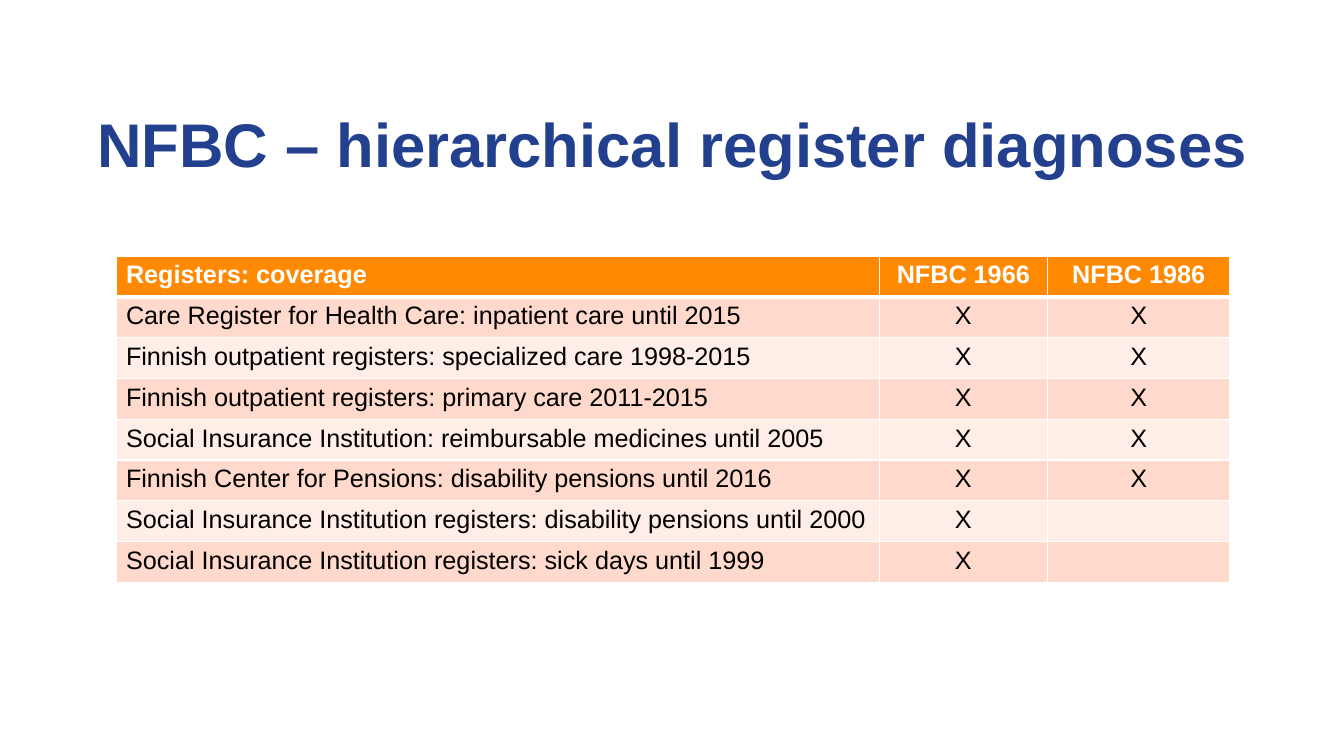
from lxml import etree
from pptx import Presentation
from pptx.dml.color import RGBColor
from pptx.enum import shapes, text
from pptx.oxml import ns
from pptx.util import Inches, Pt

TITLE = "NFBC – hierarchical register diagnoses"
HEADER = ("Registers: coverage", "NFBC 1966", "NFBC 1986")
REGISTERS = [
    ("Care Register for Health Care: inpatient care until 2015", "X", "X"),
    ("Finnish outpatient registers: specialized care 1998-2015", "X", "X"),
    ("Finnish outpatient registers: primary care 2011-2015", "X", "X"),
    ("Social Insurance Institution: reimbursable medicines until 2005", "X", "X"),
    ("Finnish Center for Pensions: disability pensions until 2016", "X", "X"),
    ("Social Insurance Institution registers: disability pensions until 2000", "X", ""),
    ("Social Insurance Institution registers: sick days until 1999", "X", ""),
]
COLUMN_WIDTHS = (7.57, 1.67, 1.81)

FONT = "Arial"
WHITE = RGBColor(0xFF, 0xFF, 0xFF)
BLACK = RGBColor(0x00, 0x00, 0x00)
BLUE = RGBColor(0x23, 0x40, 0x8F)
ORANGE = RGBColor(0xFF, 0x89, 0x00)
BANDS = (RGBColor(0xFF, 0xED, 0xE7), RGBColor(0xFF, 0xDA, 0xCC))


def style_text(paragraph, size, color, bold, align):
    paragraph.alignment = align
    for run in paragraph.runs:
        run.font.name = FONT
        run.font.size = Pt(size)
        run.font.bold = bold
        run.font.color.rgb = color


def set_borders(cell, widths):
    """Draw white cell borders; widths in points map side letters L, R, T, B."""
    properties = cell._tc.get_or_add_tcPr()
    for position, (side, width) in enumerate(widths.items()):
        line = etree.Element(ns.qn(f"a:ln{side}"), w=str(Pt(width)))
        fill = etree.SubElement(line, ns.qn("a:solidFill"))
        etree.SubElement(fill, ns.qn("a:srgbClr"), val=str(WHITE))
        properties.insert(position, line)


def add_title(slide):
    title = slide.shapes.add_shape(shapes.MSO_SHAPE.RECTANGLE, Inches(0.36),
                                   Inches(0.29), Inches(12.63), Inches(2.53))
    title.shadow.inherit = False
    title.fill.solid()
    title.fill.fore_color.rgb = WHITE
    title.line.fill.background()
    frame = title.text_frame
    frame.word_wrap = True
    frame.vertical_anchor = text.MSO_ANCHOR.TOP
    frame.margin_top = Inches(0.84)
    frame.text = TITLE
    frame.paragraphs[0].line_spacing = 0.9
    style_text(frame.paragraphs[0], 44, BLUE, True, text.PP_ALIGN.CENTER)


def add_register_table(slide):
    rows = [HEADER, *REGISTERS]
    table = slide.shapes.add_table(
        len(rows), len(HEADER), Inches(1.15), Inches(2.54),
        Inches(sum(COLUMN_WIDTHS)), Inches(3.24)).table
    for column, width in zip(table.columns, COLUMN_WIDTHS):
        column.width = Inches(width)

    for r, row in enumerate(rows):
        is_header = r == 0
        borders = {"L": 1, "R": 1, "T": 3 if r == 1 else 1, "B": 3 if is_header else 1}
        for c, wording in enumerate(row):
            cell = table.cell(r, c)
            cell.text_frame.text = wording
            style_text(cell.text_frame.paragraphs[0], 18,
                       WHITE if is_header else BLACK, is_header,
                       text.PP_ALIGN.CENTER if c else text.PP_ALIGN.LEFT)
            cell.fill.solid()
            cell.fill.fore_color.rgb = ORANGE if is_header else BANDS[r % 2]
            set_borders(cell, borders)


def main():
    deck = Presentation()
    deck.slide_width, deck.slide_height = Inches(13.33), Inches(7.5)
    slide = deck.slides.add_slide(deck.slide_layouts[6])
    add_title(slide)
    add_register_table(slide)
    deck.save("out.pptx")


if __name__ == "__main__":
    main()
